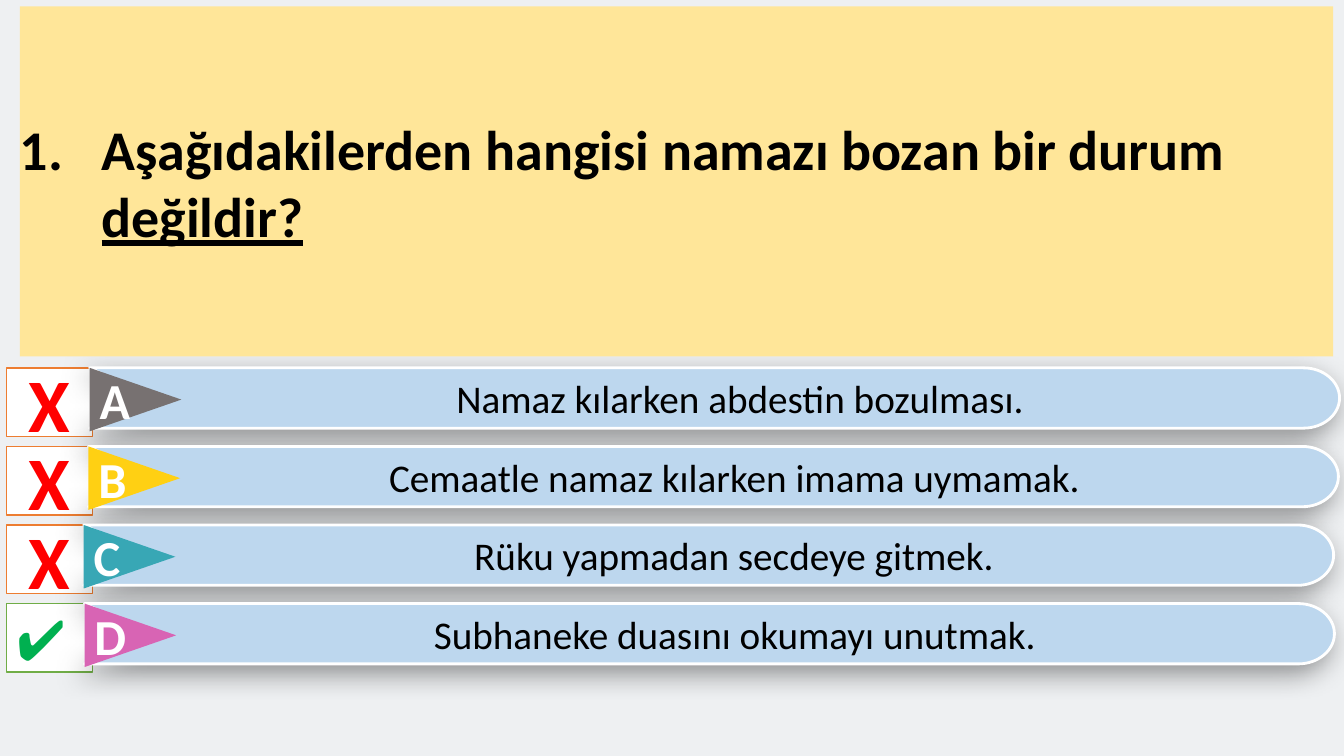
from dataclasses import dataclass

from lxml import etree
from pptx import Presentation
from pptx import util as u
from pptx.dml.color import RGBColor
from pptx.enum import shapes, text
from pptx.oxml import ns

BACKDROP = RGBColor(0xEE, 0xF0, 0xF2)
WHITE = RGBColor(0xFF, 0xFF, 0xFF)
BLACK = RGBColor(0, 0, 0)
CREAM = RGBColor(0xFF, 0xE6, 0x99)
SKY = RGBColor(0xBD, 0xD7, 0xEE)
ORANGE = RGBColor(0xED, 0x7D, 0x31)
RED = RGBColor(0xFF, 0, 0)
LEAF = RGBColor(0x70, 0xAD, 0x47)
GREEN = RGBColor(0, 0xB0, 0x50)

# Centimetres
FIRST_TOP, ROW_PITCH = 9.27, 1.98
BAR_W, BAR_H, NOTCH, CAP_W = 31.5, 1.52, 1.58, 0.91
FLAG_W, FLAG_H, FLAG_DROP = 1.6, 2.31, 0.04
ROUNDNESS = 0.55  # control point distance of a quarter ellipse


@dataclass
class Answer:
    letter: str
    wording: str
    left: float
    flag: RGBColor
    correct: bool = False


ANSWERS = [
    Answer("A", "Namaz kılarken abdestin bozulması.", 2.26, RGBColor(0x77, 0x71, 0x71)),
    Answer("B", "Cemaatle namaz kılarken imama uymamak. ", 2.23, RGBColor(0xFF, 0xD0, 0x13)),
    Answer("C", "Rüku yapmadan secdeye gitmek.", 2.11, RGBColor(0x38, 0xA7, 0xB5)),
    Answer("D", "Subhaneke duasını okumayı unutmak.", 2.13, RGBColor(0xD8, 0x64, 0xB4), True),
]


def paint(sp, fill: RGBColor, line: RGBColor | None = None, width: float = 1) -> None:
    sp.shadow.inherit = False
    sp.fill.solid()
    sp.fill.fore_color.rgb = fill
    if line is None:
        sp.line.fill.background()
    else:
        sp.line.color.rgb = line
        sp.line.width = u.Pt(width)


def write(sp, words: str, size: float, color: RGBColor, bold: bool = False,
          align=text.PP_ALIGN.CENTER):
    tf = sp.text_frame
    tf.word_wrap = True
    tf.vertical_anchor = text.MSO_ANCHOR.MIDDLE
    p = tf.paragraphs[0]
    p.text = words
    p.alignment = align
    p.font.name = "Calibri"
    p.font.size = u.Pt(size)
    p.font.bold = bold
    p.font.color.rgb = color
    return p


def add_soft_shadow(sp) -> None:
    effects = sp.element.spPr.find(ns.qn("a:effectLst"))
    shadow = etree.SubElement(effects, ns.qn("a:outerShdw"), blurRad=str(u.Pt(20)),
                              dist=str(u.Pt(7)), dir=str(135 * 60000), rotWithShape="0")
    black = etree.SubElement(shadow, ns.qn("a:srgbClr"), val="000000")
    etree.SubElement(black, ns.qn("a:alpha"), val="40000")


def add_mark(slide, answer: Answer, top: float) -> None:
    """Draw the box that shows whether the answer is right."""
    sp = slide.shapes.add_shape(shapes.MSO_SHAPE.RECTANGLE, u.Cm(0.17), u.Cm(top),
                                u.Cm(2.16), u.Cm(1.73))
    if answer.correct:
        paint(sp, WHITE, LEAF)
        write(sp, "✔", 40, GREEN, align=text.PP_ALIGN.LEFT)
    else:
        paint(sp, WHITE, ORANGE)
        write(sp, "X", 54, RED, bold=True)


def round_right_end(sp) -> None:
    """Turn the two straight segments at the right end into quarter ellipses."""
    cap_x, pull = BAR_W - CAP_W, ROUNDNESS * CAP_W
    lift = (1 - ROUNDNESS) * BAR_H / 2
    controls = [
        [(cap_x + pull, 0), (BAR_W, lift)],
        [(BAR_W, BAR_H - lift), (cap_x + pull, BAR_H)],
    ]
    segments = list(sp.element.spPr.iter(ns.qn("a:lnTo")))[1:3]
    for segment, points in zip(segments, controls):
        curve = etree.Element(ns.qn("a:cubicBezTo"))
        for x, y in points:
            etree.SubElement(curve, ns.qn("a:pt"), x=str(u.Cm(x)), y=str(u.Cm(y)))
        curve.append(segment[0])
        segment.getparent().replace(segment, curve)


def add_bar(group, answer: Answer, top: float) -> None:
    """Draw the bar, notched at the left and rounded at the right."""
    left, middle, bottom = answer.left, top + BAR_H / 2, top + BAR_H
    cap_x = left + BAR_W - CAP_W
    outline = [(cap_x, top), (left + BAR_W, middle), (cap_x, bottom),
               (left, bottom), (left + NOTCH, middle)]
    builder = group.shapes.build_freeform(u.Cm(left), u.Cm(top))
    builder.add_line_segments([(u.Cm(x), u.Cm(y)) for x, y in outline], close=True)
    sp = builder.convert_to_shape()
    round_right_end(sp)
    paint(sp, SKY, WHITE, 2)
    add_soft_shadow(sp)
    p = write(sp, answer.wording, 28, BLACK)
    p.level = 1
    pPr = p._p.get_or_add_pPr()
    pPr.set("marL", str(u.Cm(1.27)))
    pPr.set("indent", "0")


def add_flag(group, answer: Answer, top: float) -> None:
    """Draw the lettered triangle pointing right."""
    sp = group.shapes.add_shape(
        shapes.MSO_SHAPE.ISOSCELES_TRIANGLE,
        u.Cm(answer.left + (FLAG_H - FLAG_W) / 2),
        u.Cm(top + (BAR_H - FLAG_H) / 2 + FLAG_DROP), u.Cm(FLAG_W), u.Cm(FLAG_H))
    sp.rotation = 90
    paint(sp, answer.flag)
    write(sp, answer.letter, 36, WHITE, bold=True)
    sp.element.txBody.bodyPr.set("vert", "vert270")


def add_question(slide) -> None:
    sp = slide.shapes.add_shape(shapes.MSO_SHAPE.RECTANGLE, u.Cm(0.5), u.Cm(0.16),
                                u.Cm(33.1), u.Cm(8.82))
    paint(sp, CREAM)
    tf = sp.text_frame
    tf.margin_left = tf.margin_right = tf.margin_top = tf.margin_bottom = 0
    p = write(sp, "Aşağıdakilerden hangisi namazı bozan bir durum ", 40, BLACK,
              bold=True, align=text.PP_ALIGN.LEFT)
    r = p.add_run()
    r.text = "değildir?"
    r.font.underline = True
    pPr = p._p.get_or_add_pPr()
    pPr.set("marL", str(u.Cm(2.06)))
    pPr.set("indent", str(-u.Cm(2.06)))
    pPr.insert(0, etree.Element(ns.qn("a:buAutoNum"), type="arabicPeriod"))


def main() -> None:
    prs = Presentation()
    prs.slide_width, prs.slide_height = u.Cm(33.87), u.Cm(19.05)
    slide = prs.slides.add_slide(prs.slide_layouts[6])
    slide.background.fill.solid()
    slide.background.fill.fore_color.rgb = BACKDROP

    rows = [(answer, FIRST_TOP + i * ROW_PITCH) for i, answer in enumerate(ANSWERS)]
    for answer, top in reversed(rows):
        add_mark(slide, answer, top)
    for answer, top in rows:
        group = slide.shapes.add_group_shape()
        add_bar(group, answer, top)
        add_flag(group, answer, top)
    add_question(slide)
    prs.save("out.pptx")


if __name__ == "__main__":
    main()
